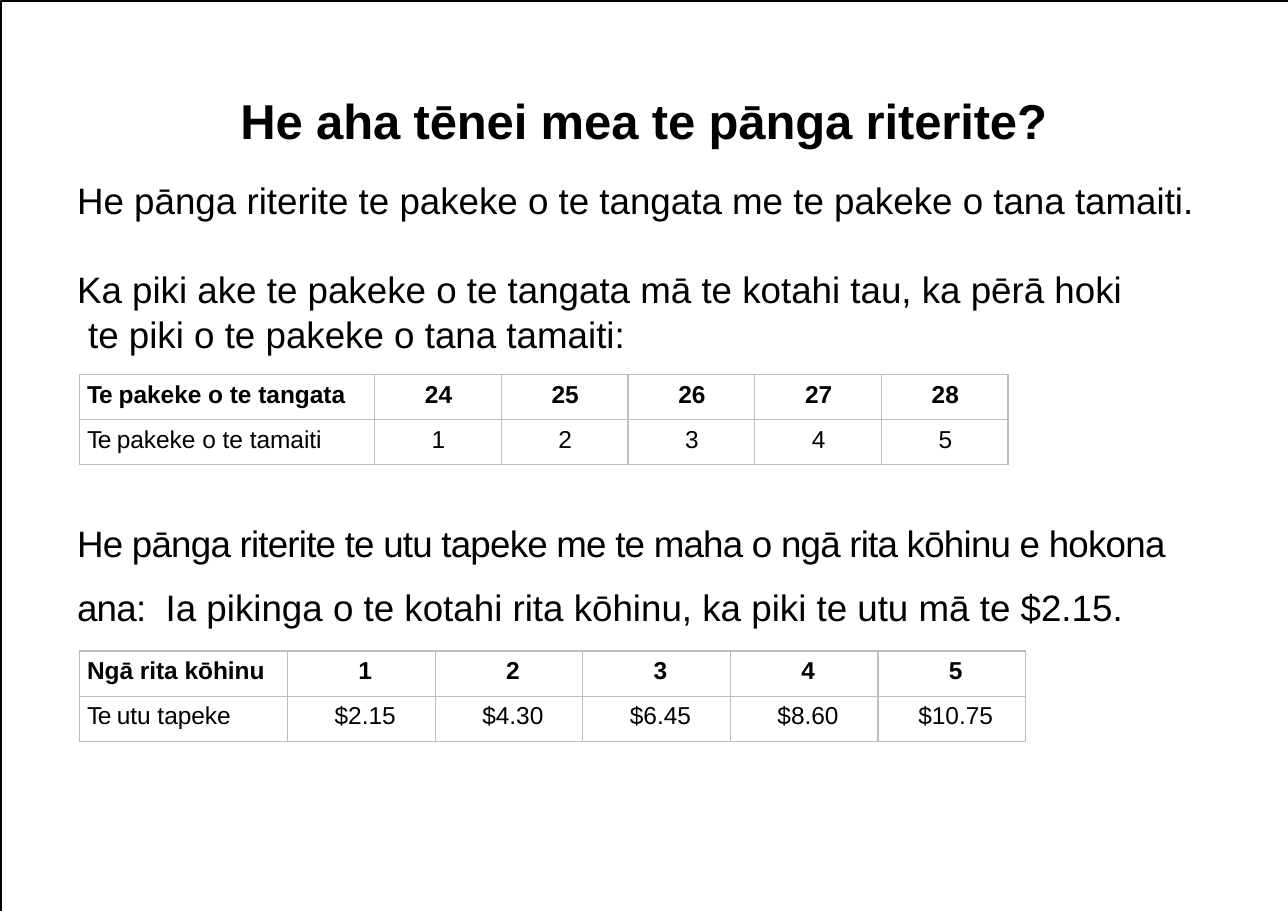
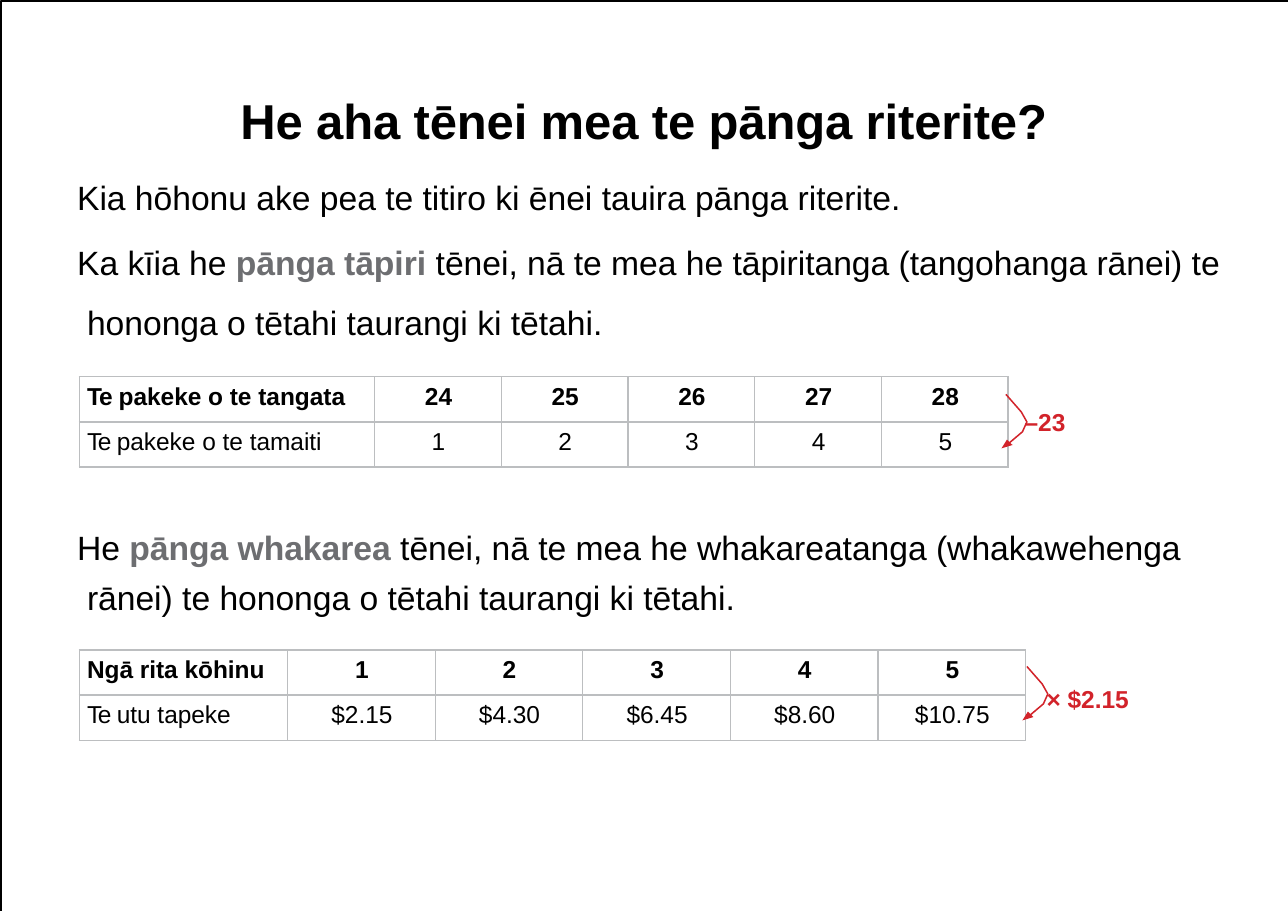
from lxml.etree import SubElement
from pptx import Presentation
from pptx.dml.color import RGBColor
from pptx.enum.text import MSO_ANCHOR as ANCHOR, MSO_AUTO_SIZE as AUTO, PP_ALIGN as ALIGN
from pptx.oxml.ns import qn
from pptx.util import Inches, Pt

BLACK, GREY, RULE, RED = "000000", "6D6E71", "BCBEC0", "D2232A"
TITLE = "He aha tēnei mea te pānga riterite?"
TEXT_LEFT, TABLE_LEFT, ROW_HEIGHT = 0.7, 0.72, 0.41

AGES = dict(
    widths=[2.68] + [1.15] * 5,
    rows=[[("Te ", "pakeke o te tangata"), "24", "25", "26", "27", "28"],
          [("Te ", "pakeke o te tamaiti"), "1", "2", "3", "4", "5"]])
PETROL = dict(
    widths=[1.89] + [1.34] * 5,
    rows=[[("", "Ngā rita kōhinu"), "1", "2", "3", "4", "5"],
          [("Te ", "utu tapeke"), "$2.15", "$4.30", "$6.45", "$8.60", "$10.75"]])

# Outlines in inches, from the top of the bracket
BRACKET = [(0, 0), (0.14, 0.16), (0.19, 0.25), (0.15, 0.34), (0.02, 0.45)]
ARROWHEAD = [(0.01, 0.41), (-0.04, 0.49), (0.06, 0.46)]


def rgb(color):
    return RGBColor.from_string(color)


class Deck:
    font = "Arial"

    def __init__(self, width, height):
        self.prs = Presentation()
        self.prs.slide_width, self.prs.slide_height = Inches(width), Inches(height)
        self.width, self.height = width, height
        self.slide = None

    def new_slide(self, title):
        self.slide = self.prs.slides.add_slide(self.prs.slide_layouts[5])
        self.outline([(self.width, 0.01), (0.01, 0.01), (0.01, self.height)], line=BLACK)
        sp = self.slide.shapes.title
        sp.left, sp.top, sp.width, sp.height = map(Inches, (1.84, 0.82, 8, 0.55))
        tf = self.frame(sp)
        p = tf.paragraphs[0]
        p.alignment = ALIGN.CENTER
        self.run(p, title, 32, bold=True, spacing=-0.1)

    def frame(self, sp):
        tf = sp.text_frame
        tf.word_wrap, tf.auto_size, tf.vertical_anchor = True, AUTO.NONE, ANCHOR.TOP
        tf.margin_left = tf.margin_right = tf.margin_top = tf.margin_bottom = 0
        return tf

    def run(self, p, text, size, color=BLACK, bold=False, spacing=0):
        """Add a run; spacing is the extra space between letters in points."""
        r = p.add_run()
        r.text = text
        r.font.name, r.font.size, r.font.bold = self.font, Pt(size), bold
        r.font.color.rgb = rgb(color)
        if spacing:
            r.font._element.set("spc", str(round(spacing * 100)))

    def text_box(self, left, top, width, height):
        sp = self.slide.shapes.add_textbox(*map(Inches, (left, top, width, height)))
        return self.frame(sp)

    def paragraph(self, tf, runs, size, first=True, before=0, line=None, hanging=0):
        """Add a paragraph of (text, run options) pairs."""
        p = tf.paragraphs[0] if first else tf.add_paragraph()
        if hanging:
            pPr = p._p.get_or_add_pPr()
            pPr.set("marL", str(Inches(hanging)))
            pPr.set("indent", str(-Inches(hanging)))
        if before:
            p.space_before = Pt(before)
        if line:
            p.line_spacing = line
        for i, (text, options) in enumerate(runs):
            if text == "\n":
                p.add_line_break()
            else:
                self.run(p, text, size, **options)

    def label(self, left, top, text):
        tf = self.text_box(left, top, 1.2, 0.27)
        self.paragraph(tf, [(text, dict(color=RED, bold=True))], 16)

    def outline(self, points, line=None, fill=None):
        """Draw an open line, or a closed filled area when fill is given."""
        (x, y), *rest = [(Inches(x), Inches(y)) for x, y in points]
        builder = self.slide.shapes.build_freeform(x, y)
        builder.add_line_segments(rest, close=fill is not None)
        sp = builder.convert_to_shape()
        sp.shadow.inherit = False
        if fill:
            sp.fill.solid()
            sp.fill.fore_color.rgb = rgb(fill)
        else:
            sp.fill.background()
        if line:
            sp.line.color.rgb = rgb(line)
            sp.line.width = Pt(1)
        else:
            sp.line.fill.background()

    def bracket_arrow(self, left, top):
        def place(points):
            return [(left + x, top + y) for x, y in points]
        self.outline(place(BRACKET), line=RED)
        self.outline(place(ARROWHEAD), fill=RED)

    def borders(self, cell):
        tcPr = cell._tc.get_or_add_tcPr()
        for side in ("a:lnL", "a:lnR", "a:lnT", "a:lnB"):
            ln = SubElement(tcPr, qn(side), w=str(Pt(1)))
            fill = SubElement(ln, qn("a:solidFill"))
            SubElement(fill, qn("a:srgbClr"), val=RULE)

    def table(self, top, widths, rows, value_inset=0.01):
        """Add a table with a bold first row and centred values."""
        size = (sum(widths), ROW_HEIGHT * len(rows))
        tbl = self.slide.shapes.add_table(
            len(rows), len(widths), *map(Inches, (TABLE_LEFT, top, *size))).table
        tbl.first_row = tbl.horz_banding = False
        for column, width in zip(tbl.columns, widths):
            column.width = Inches(width)
        for i, row in enumerate(rows):
            tbl.rows[i].height = Inches(ROW_HEIGHT)
            for j, content in enumerate(row):
                cell = tbl.cell(i, j)
                self.borders(cell)
                cell.fill.background()
                cell.margin_left = Inches(value_inset if j else 0.07)
                cell.margin_right = cell.margin_bottom = 0
                cell.margin_top = Inches(0.06)
                p, bold = cell.text_frame.paragraphs[0], i == 0
                if j:
                    p.alignment = ALIGN.CENTER
                    self.run(p, content, 16, bold=bold)
                else:
                    lead, rest = content
                    if lead:
                        self.run(p, lead, 16, bold=bold, spacing=-0.6 if bold else -0.9)
                    self.run(p, rest, 16, bold=bold)


def examples_slide(deck):
    deck.new_slide(TITLE)
    tf = deck.text_box(TEXT_LEFT, 1.61, 10.4, 1.6)
    deck.paragraph(tf, [
        ("He pānga riterite te pakeke o te tangata me te pakeke o tana tamaiti.", {})], 24)
    deck.paragraph(tf, [
        ("Ka piki ake te pakeke o te tangata mā te kotahi tau, ka pērā hoki", {}),
        ("\n", {}),
        ("te piki o te pakeke o tana tamaiti:", {})], 24, first=False, before=30, hanging=0.1)
    deck.table(3.4, **AGES)
    tf = deck.text_box(TEXT_LEFT, 4.55, 10.45, 1.19)
    deck.paragraph(tf, [
        ("He pānga riterite te utu tapeke me te maha o ngā rita kōhinu e hokona ana:",
         dict(spacing=-0.5)),
        (" ", dict(spacing=6)),
        ("Ia pikinga o te kotahi rita kōhinu, ka piki te utu mā te $2.15.", {})], 24, line=1.45)
    deck.table(5.91, **PETROL, value_inset=0.07)


def relations_slide(deck):
    term = dict(color=GREY, bold=True)
    deck.new_slide(TITLE)
    tf = deck.text_box(TEXT_LEFT, 1.61, 10.45, 1.6)
    deck.paragraph(tf, [
        ("Kia hōhonu ake pea te titiro ki ēnei tauira pānga riterite.", {})], 22)
    deck.paragraph(tf, [
        ("Ka kīia he ", {}),
        ("pānga tāpiri ", term),
        ("tēnei, nā te mea he tāpiritanga (tangohanga rānei) te "
         "hononga o tētahi taurangi ki tētahi.", {})],
        22, first=False, before=3.4, line=Pt(39), hanging=0.09)
    deck.table(3.42, **AGES)
    deck.bracket_arrow(9.13, 3.58)
    deck.label(9.3, 3.7, "–23")
    tf = deck.text_box(TEXT_LEFT, 4.69, 10.45, 0.95)
    deck.paragraph(tf, [
        ("He ", {}),
        ("pānga whakarea ", term),
        ("tēnei, nā te mea he whakareatanga (whakawehenga rānei) te "
         "hononga o tētahi taurangi ki tētahi.", {})], 22, line=1.25, hanging=0.09)
    deck.table(5.9, **PETROL)
    deck.bracket_arrow(9.32, 6.05)
    deck.label(9.5, 6.21, "× $2.15")


def main():
    deck = Deck(11.69, 8.27)
    examples_slide(deck)
    relations_slide(deck)
    deck.prs.save("out.pptx")


if __name__ == "__main__":
    main()
